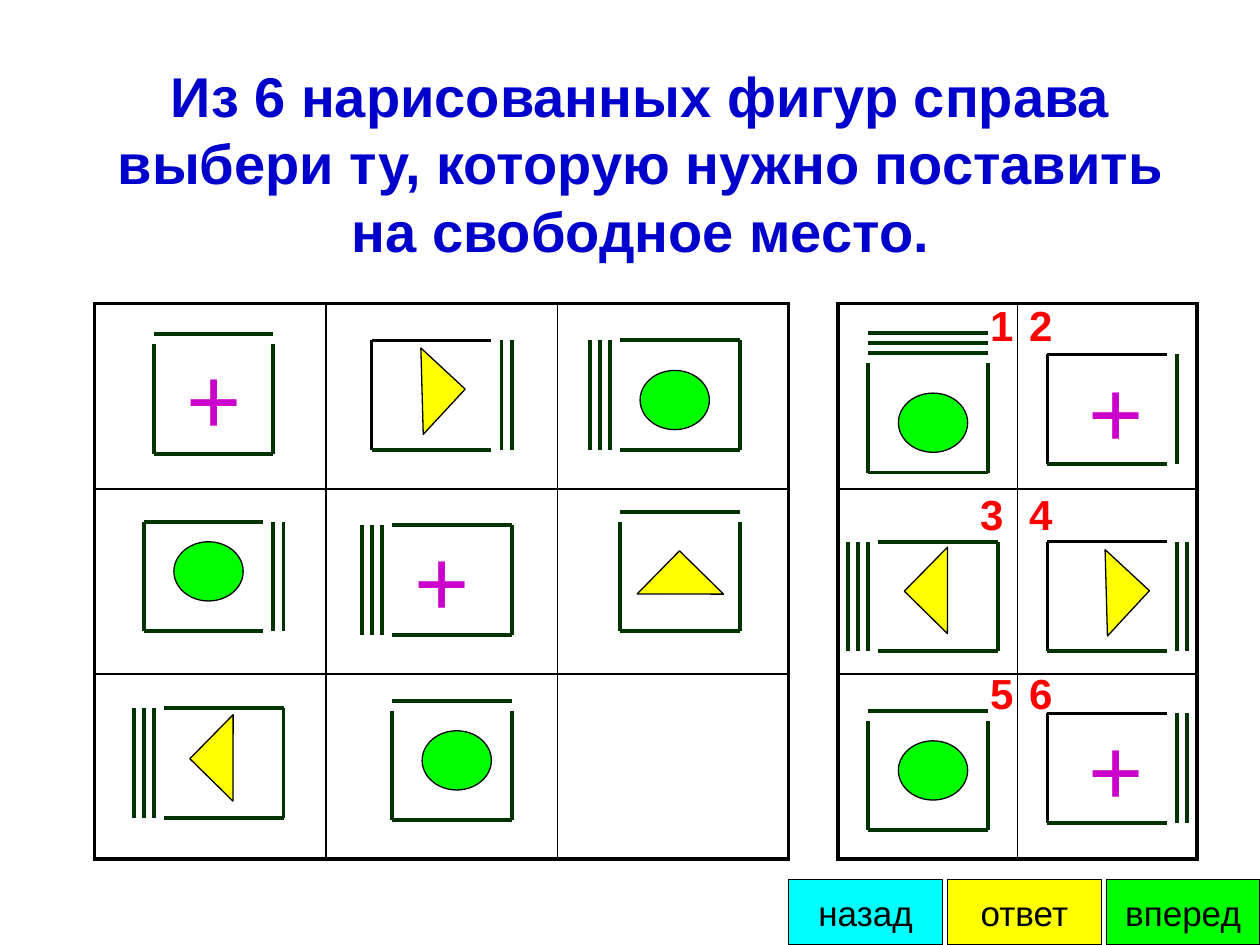
"""Build a puzzle slide: a 3 by 3 grid of figures with six answer options."""
from lxml.etree import SubElement
from pptx import Presentation
from pptx.dml.color import RGBColor
from pptx.enum.shapes import MSO_CONNECTOR, MSO_SHAPE
from pptx.enum.text import MSO_ANCHOR, PP_ALIGN
from pptx.oxml.ns import qn
from pptx.util import Inches, Pt

COLORS = {
    "title": "0000CC", "black": "000000", "frame": "003300", "plus": "CC00CC",
    "number": "FF0000", "yellow": "FFFF00", "green": "00FF00", "cyan": "00FFFF",
}
COLORS = {name: RGBColor.from_string(value) for name, value in COLORS.items()}
BOX_WIDTH, BOX_HEIGHT, LINE_GAP = 0.95, 0.87, 0.08


def write_text(shape, text, size, color, bold=False, align=PP_ALIGN.LEFT, wrap=False):
    frame = shape.text_frame
    frame.text = text
    frame.word_wrap = wrap
    paragraph = frame.paragraphs[0]
    paragraph.alignment = align
    font = paragraph.runs[0].font
    font.name, font.size, font.bold = "Arial", Pt(size), bold
    font.color.rgb = COLORS[color]


def add_filled_shape(shapes, kind, left, top, width, height, fill):
    shape = shapes.add_shape(kind, Inches(left), Inches(top), Inches(width), Inches(height))
    shape.shadow.inherit = False
    shape.fill.solid()
    shape.fill.fore_color.rgb = COLORS[fill]
    shape.line.color.rgb = COLORS["black"]
    shape.line.width = Pt(0.75)
    return shape


presentation = Presentation()
presentation.slide_width, presentation.slide_height = Inches(10), Inches(7.5)
slide = presentation.slides.add_slide(presentation.slide_layouts[6])

title = slide.shapes.add_textbox(Inches(0.83), Inches(0.44), Inches(8.51), Inches(1.7))
write_text(
    title,
    "Из 6 нарисованных фигур справа выбери ту, которую нужно поставить на свободное место.",
    32, "title", True, PP_ALIGN.CENTER, True,
)

for left, width, column_count in [(0.75, 5.51, 3), (6.65, 2.85, 2)]:
    table = slide.shapes.add_table(
        3, column_count, Inches(left), Inches(2.41), Inches(width), Inches(4.41)
    ).table
    table.first_row = table.horz_banding = False
    for row in range(3):
        for column in range(column_count):
            cell = table.cell(row, column)
            outer_sides = {
                "lnL": column == 0, "lnR": column == column_count - 1,
                "lnT": row == 0, "lnB": row == 2,
            }
            for side, is_outer in outer_sides.items():
                border = SubElement(cell._tc.get_or_add_tcPr(), qn(f"a:{side}"))
                border.set("w", str(Pt(2.25 if is_outer else 1)))
                fill = SubElement(border, qn("a:solidFill"))
                SubElement(fill, qn("a:srgbClr")).set("val", str(COLORS["black"]))
            cell.fill.background()

TRIANGLE_ROTATIONS = {"right triangle": 222.8, "up triangle": 134.5, "left triangle": 44.5}
figures = [
    (1.22, 2.73, "top", 1, False, "plus", 1.38, 2.65),
    (2.95, 2.7, "right", 2, True, "right triangle", 3.11, 2.86),
    (4.92, 2.7, "left", 3, False, "circle", 5.08, 2.94),
    (1.14, 4.14, "right", 2, False, "circle", 1.38, 4.3),
    (3.11, 4.17, "left", 3, False, "plus", 3.19, 4.09),
    (4.92, 4.14, "top", 1, False, "up triangle", 5.16, 4.47),
    (1.3, 5.62, "left", 3, False, "left triangle", 1.61, 5.77),
    (3.11, 5.64, "top", 1, False, "circle", 3.35, 5.8),
    (6.89, 2.88, "top", 3, False, "circle", 7.13, 3.12),
    (6.89, 5.72, "top", 1, False, "circle", 7.13, 5.88),
    (8.31, 2.81, "right", 1, True, "plus", 8.54, 2.75),
    (8.31, 5.66, "right", 2, True, "plus", 8.54, 5.59),
    (6.97, 4.3, "left", 3, False, "left triangle", 7.28, 4.44),
    (8.31, 4.3, "right", 2, True, "right triangle", 8.54, 4.46),
]
for left, top, open_side, line_count, thin, symbol, symbol_left, symbol_top in figures:
    shapes = slide.shapes.add_group_shape().shapes
    right, bottom = left + BOX_WIDTH, top + BOX_HEIGHT
    sides = {
        "top": (left, top, right, top),
        "left": (left, top, left, bottom),
        "bottom": (left, bottom, right, bottom),
        "right": (right, top, right, bottom),
    }
    lines = [(side, ends) for side, ends in sides.items() if side != open_side]
    step_x, step_y = {"top": (0, -1), "left": (-1, 0), "right": (1, 0)}[open_side]
    for number in range(1, line_count + 1):
        shift_x, shift_y = step_x * number * LINE_GAP, step_y * number * LINE_GAP
        x1, y1, x2, y2 = sides[open_side]
        lines.append(("extra", (x1 + shift_x, y1 + shift_y, x2 + shift_x, y2 + shift_y)))
    for side, ends in lines:
        line = shapes.add_connector(MSO_CONNECTOR.STRAIGHT, *[Inches(value) for value in ends])
        is_thin = thin and side in ("top", "left")
        line.line.color.rgb = COLORS["black" if is_thin else "frame"]
        line.line.width = Pt(1.75 if is_thin else 2.25)
        SubElement(line._element.spPr, qn("a:effectLst"))

    if symbol == "plus":
        plus = shapes.add_textbox(
            Inches(symbol_left), Inches(symbol_top), Inches(0.64), Inches(1)
        )
        write_text(plus, "+", 54, "plus")
    elif symbol == "circle":
        add_filled_shape(shapes, MSO_SHAPE.OVAL, symbol_left, symbol_top, 0.55, 0.47, "green")
    else:
        triangle = add_filled_shape(
            shapes, MSO_SHAPE.RIGHT_TRIANGLE, symbol_left, symbol_top, 0.48, 0.49, "yellow"
        )
        triangle.rotation = TRIANGLE_ROTATIONS[symbol]

number_places = [
    (7.76, 2.33), (8.07, 2.33), (7.68, 3.83), (8.07, 3.83), (7.76, 5.25), (8.07, 5.25),
]
for number, (left, top) in enumerate(number_places, 1):
    label = slide.shapes.add_textbox(Inches(left), Inches(top), Inches(0.39), Inches(0.5))
    write_text(label, str(number), 24, "number", True)

buttons = [("назад", "cyan"), ("ответ", "yellow"), ("вперед", "green")]
for index, (caption, fill) in enumerate(buttons):
    button = add_filled_shape(
        slide.shapes, MSO_SHAPE.RECTANGLE, 6.26 + index * 1.26, 6.98, 1.22, 0.52, fill
    )
    button.text_frame.vertical_anchor = MSO_ANCHOR.MIDDLE
    write_text(button, caption, 20, "black", align=PP_ALIGN.CENTER)

presentation.save("out.pptx")
